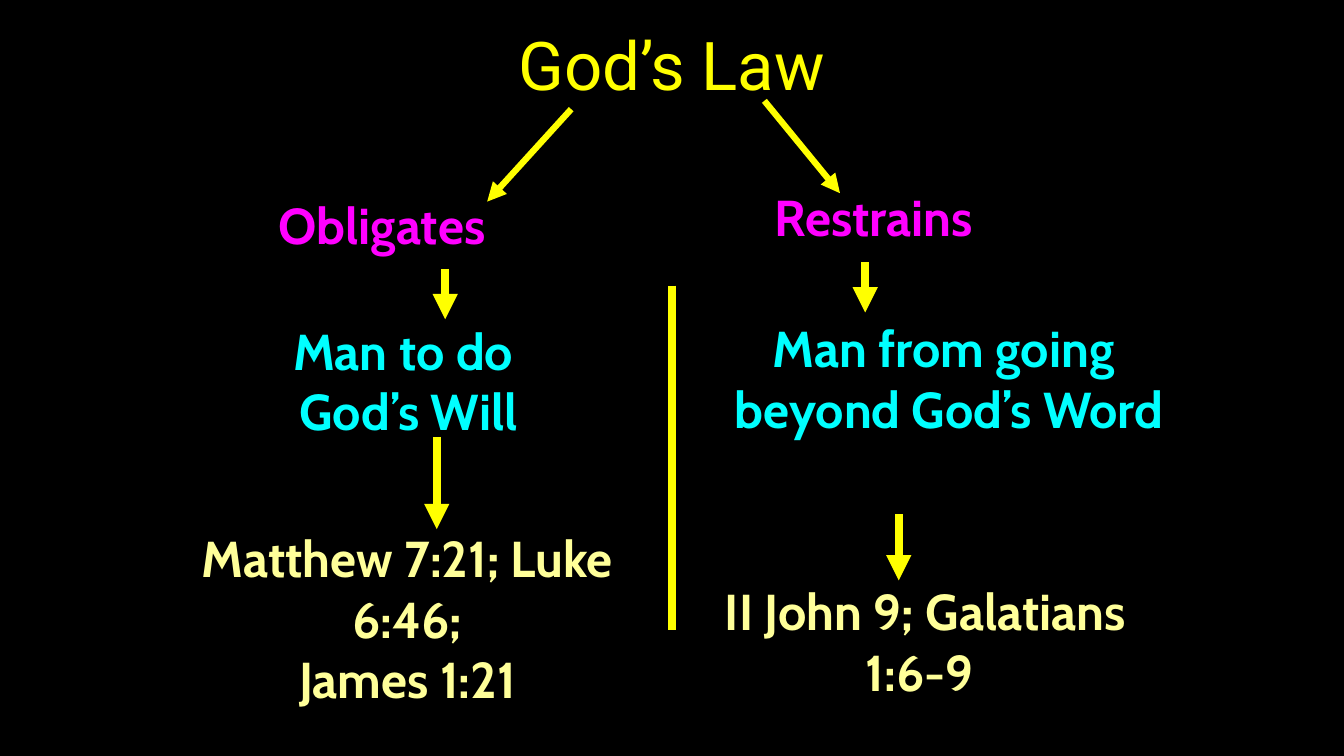
from dataclasses import dataclass

from lxml.etree import SubElement
from pptx import Presentation
from pptx.dml.color import RGBColor
from pptx.enum.shapes import MSO_CONNECTOR
from pptx.enum.text import MSO_ANCHOR, MSO_AUTO_SIZE, PP_ALIGN
from pptx.oxml.ns import qn
from pptx.util import Inches, Pt

# Content: places are columns and rows of a 160 by 90 grid
COLUMNS, ROWS = 160, 90
TITLE = ("God’s Law", (20, 2.2, 120, 10.8))

# role, paragraphs, (column, row, width, height), first text column if left aligned
TEXTS = [
    ("verb", ["Obligates"], (20, 22.5, 51, 8.4), 33.2),
    ("duty", ["Man to do", " God’s Will"], (20, 37.5, 56, 15.6), None),
    ("verse", ["Matthew 7:21; Luke 6:46;", "James 1:21"], (20, 62.2, 57, 22.8), None),
    ("verb", ["Restrains"], (91, 21.6, 49, 8.4), 92.2),
    ("duty", ["Man from going ", "beyond God’s Word"], (86, 37.2, 54, 22.8), None),
    ("verse", [" II John 9; Galatians 1:6-9"], (83, 68.5, 53, 15.6), None),
]

# role, start, end
LINES = [
    ("branch", (68, 13), (58, 24)),
    ("step", (53, 32), (53, 38)),
    ("step", (52, 52), (52, 63)),
    ("divider", (80, 34), (80, 75)),
    ("branch", (91, 12), (100, 23)),
    ("step", (103, 31.2), (103, 37.2)),
    ("step", (107, 61.2), (107, 69.1)),
]


@dataclass(frozen=True)
class Theme:
    background: str = "000000"
    accent: str = "FFFF00"
    title_font: str = "Roboto"
    body_font: str = "Cabin"
    title_size: int = 48
    body_size: int = 36


THEME = Theme()
TEXT_COLORS = {"verb": "FF00FF", "duty": "00FFFF", "verse": "FFFF99"}
LINE_WIDTHS = {"branch": 4.5, "step": 6, "divider": 6}

deck = Presentation()
deck.slide_width, deck.slide_height = Inches(13.33), Inches(7.5)
page = deck.slides.add_slide(deck.slide_layouts[5])
page.background.fill.solid()
page.background.fill.fore_color.rgb = RGBColor.from_string(THEME.background)


def across(columns):
    return round(deck.slide_width * columns / COLUMNS)


def down(rows):
    return round(deck.slide_height * rows / ROWS)


def place(box, area):
    column, row, width, height = area
    box.left, box.top = across(column), down(row)
    box.width, box.height = across(width), down(height)


def write(box, paragraphs, font, size, color, bold, align):
    frame = box.text_frame
    frame.word_wrap = True
    frame.auto_size = MSO_AUTO_SIZE.NONE
    frame.vertical_anchor = MSO_ANCHOR.TOP
    for index, text in enumerate(paragraphs):
        para = frame.add_paragraph() if index else frame.paragraphs[0]
        para.alignment = align
        span = para.add_run()
        span.text = text
        span.font.name, span.font.size, span.font.bold = font, Pt(size), bold
        span.font.color.rgb = RGBColor.from_string(color)


# Title
title_text, title_area = TITLE
title = page.shapes.title
place(title, title_area)
write(title, [title_text], THEME.title_font, THEME.title_size, THEME.accent,
      False, PP_ALIGN.CENTER)

# Two columns of text
for role, paragraphs, area, text_column in TEXTS:
    box = page.shapes.add_textbox(0, 0, 0, 0)
    place(box, area)
    align = PP_ALIGN.CENTER
    if text_column is not None:
        align = PP_ALIGN.LEFT
        box.text_frame.margin_left = across(text_column - area[0])
    write(box, paragraphs, THEME.body_font, THEME.body_size, TEXT_COLORS[role],
          True, align)

# Arrows and the divider
for role, start, end in LINES:
    line = page.shapes.add_connector(
        MSO_CONNECTOR.STRAIGHT, across(start[0]), down(start[1]),
        across(end[0]), down(end[1]))
    line.line.color.rgb = RGBColor.from_string(THEME.accent)
    line.line.width = Pt(LINE_WIDTHS[role])
    if role != "divider":
        SubElement(line.line._get_or_add_ln(), qn("a:tailEnd"), type="triangle")
    SubElement(line._element.spPr, qn("a:effectLst"))

deck.save("out.pptx")
